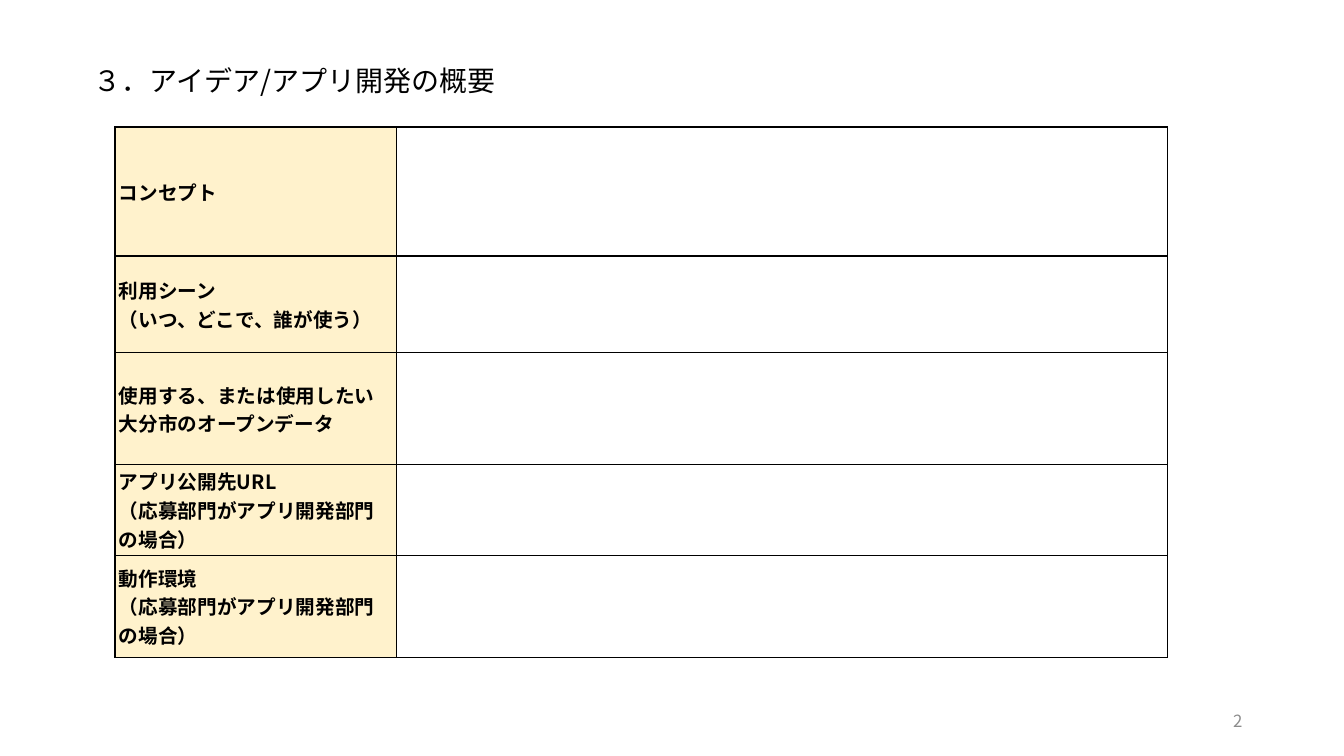
import pptx
import pptx.util
import pptx.dml.color
import pptx.enum.text
import lxml.etree

Inch = pptx.util.Inches
Pt = pptx.util.Pt
Align = pptx.enum.text.PP_ALIGN
Mid = pptx.enum.text.MSO_ANCHOR.MIDDLE
FONT = "Noto Sans CJK JP"
NS = "http://schemas.openxmlformats.org/drawingml/2006/main"


def color(code):
    return pptx.dml.color.RGBColor.from_string(code)


def write(frame, text, size=14, ink="000000", bold=False, align=Align.LEFT):
    frame.word_wrap = True
    for i, line in enumerate(text.split("\n")):
        para = frame.paragraphs[0] if i == 0 else frame.add_paragraph()
        para.alignment = align
        run = para.add_run()
        run.text = line
        font = run.font
        font.size, font.bold, font.name = Pt(size), bold, FONT
        font.color.rgb = color(ink)
        for tag in ("ea", "cs"):
            lxml.etree.SubElement(run.font._element, f"{{{NS}}}{tag}", typeface=FONT)


deck = pptx.Presentation()
deck.slide_width, deck.slide_height = Inch(13.33), Inch(7.5)
slide = deck.slides.add_slide(deck.slide_layouts[6])

title = slide.shapes.add_textbox(Inch(0.83), Inch(0.58), Inch(4.41), Inch(0.44))
write(title.text_frame, "３．アイデア/アプリ開発の概要", size=20)

labels = [
    "コンセプト",
    "利用シーン\n（いつ、どこで、誰が使う）",
    "使用する、または使用したい大分市のオープンデータ",
    "アプリ公開先URL\n（応募部門がアプリ開発部門の場合）",
    "動作環境\n（応募部門がアプリ開発部門の場合）",
]
rows = [1.28, 0.96, 1.11, 0.9, 1.01]
cols = [2.79, 7.65]

form = slide.shapes.add_table(
    len(rows), len(cols), Inch(1.14), Inch(1.26), Inch(sum(cols)), Inch(sum(rows))
).table
form.first_row = form.horz_banding = False
for col, width in zip(form.columns, cols):
    col.width = Inch(width)

for row, high, label in zip(form.rows, rows, labels):
    row.height = Inch(high)
    for cell, fill in zip(row.cells, ("FFF2CC", "FFFFFF")):
        cell.vertical_anchor = Mid
        cell.margin_left = cell.margin_right = Inch(0.04)
        cell.margin_top = cell.margin_bottom = 0
        props = cell._tc.get_or_add_tcPr()
        for side in ("lnL", "lnR", "lnT", "lnB"):
            edge = lxml.etree.SubElement(props, f"{{{NS}}}{side}", w=str(Pt(1)))
            paint = lxml.etree.SubElement(edge, f"{{{NS}}}solidFill")
            lxml.etree.SubElement(paint, f"{{{NS}}}srgbClr", val="000000")
        cell.fill.solid()
        cell.fill.fore_color.rgb = color(fill)
    write(row.cells[0].text_frame, label, bold=True)

page = slide.shapes.add_textbox(Inch(9.42), Inch(6.95), Inch(3), Inch(0.4))
page.text_frame.vertical_anchor = Mid
write(page.text_frame, "2", size=12, ink="8C8C8C", align=Align.RIGHT)

deck.save("out.pptx")
